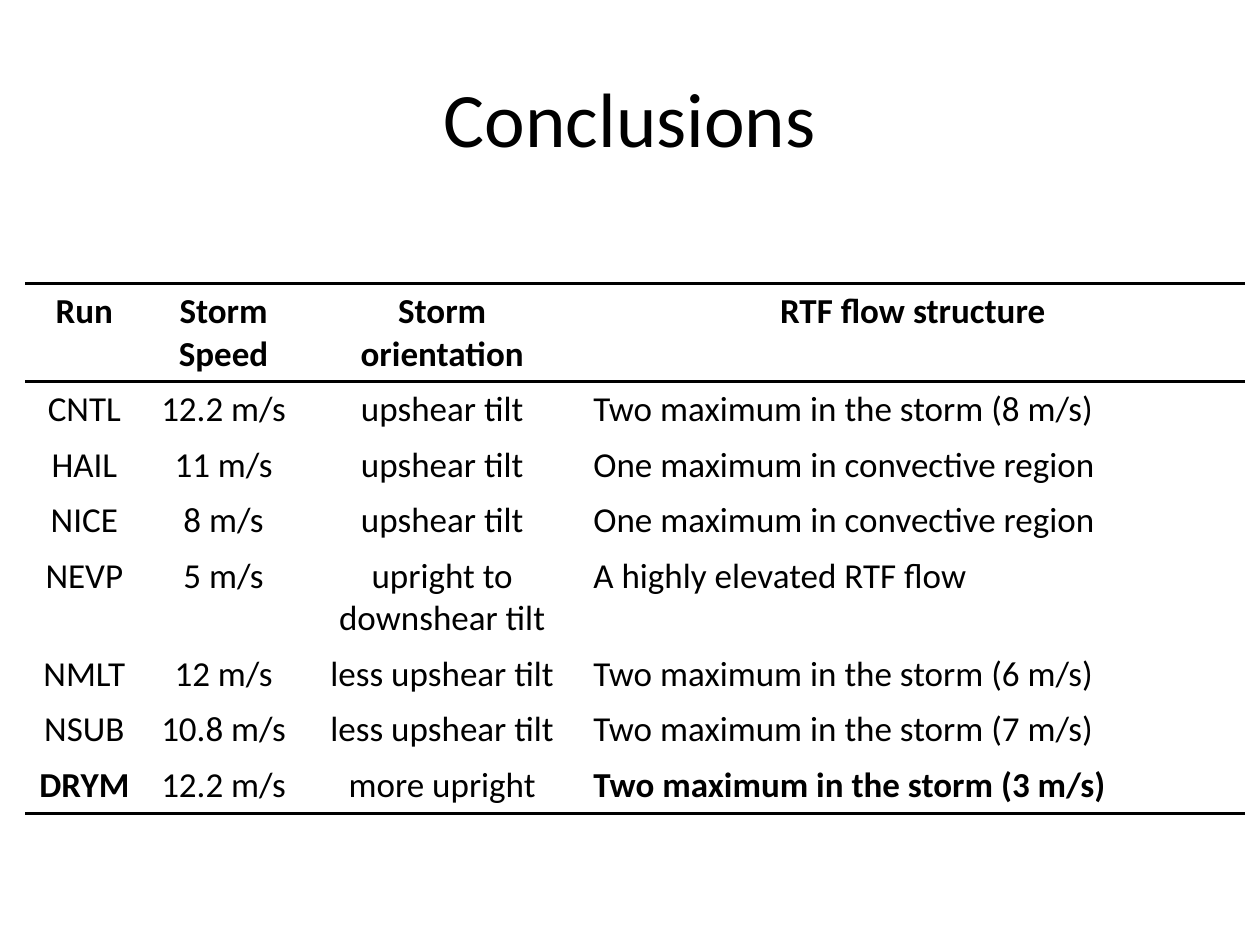
import dataclasses

import pptx
import pptx.dml.color
import pptx.enum.text
import pptx.oxml
import pptx.oxml.ns
import pptx.util

Inches = pptx.util.Inches
ALIGN = pptx.enum.text.PP_ALIGN
ANCHOR = pptx.enum.text.MSO_ANCHOR


@dataclasses.dataclass(frozen=True)
class Theme:
    font: str = "Calibri"
    ink: str = "000000"
    paper: str = "FFFFFF"
    title_size: int = 44
    table_size: int = 20
    rule_width: int = 2
    plain_table_style: str = "{2D5ABB26-0587-4C30-8999-92F81FD0307C}"


THEME = Theme()

HEADINGS = ("Run", "Storm Speed", "Storm orientation", "RTF flow structure")
RUNS = (
    ("CNTL", "12.2 m/s", "upshear tilt", "Two maximum in the storm (8 m/s)"),
    ("HAIL", "11 m/s", "upshear tilt", "One maximum in convective region"),
    ("NICE", "8 m/s", "upshear tilt", "One maximum in convective region"),
    ("NEVP", "5 m/s", "upright to downshear tilt", "A highly elevated RTF flow"),
    ("NMLT", "12 m/s", "less upshear tilt", "Two maximum in the storm (6 m/s)"),
    ("NSUB", "10.8 m/s", "less upshear tilt", "Two maximum in the storm (7 m/s)"),
    ("DRYM", "12.2 m/s", "more upright", "Two maximum in the storm (3 m/s)"),
)
COLUMN_SHARES = (0.94, 1.27, 2.2, 5.27)
ONE_LINE, TWO_LINES = 0.44, 0.78
TWO_LINE_RUNS = {"Run", "NEVP"}
BOLD_CELLS = {("DRYM", 0), ("DRYM", 3)}


def write(text_frame, text, size, align, bold=False):
    text_frame.text = text
    paragraph = text_frame.paragraphs[0]
    paragraph.alignment = align
    font = paragraph.runs[0].font
    font.name = THEME.font
    font.size = pptx.util.Pt(size)
    font.bold = bold
    font.color.rgb = pptx.dml.color.RGBColor.from_string(THEME.ink)


def rule_cell(cell, edges):
    properties = cell._tc.get_or_add_tcPr()
    for position, edge in enumerate(edges):
        line = pptx.oxml.parse_xml(
            f'<a:ln{edge} {pptx.oxml.ns.nsdecls("a")} w="{pptx.util.Pt(THEME.rule_width)}">'
            f'<a:solidFill><a:srgbClr val="{THEME.ink}"/></a:solidFill></a:ln{edge}>'
        )
        properties.insert(position, line)


def place_title(slide, left, top, width, height):
    title = slide.shapes.title
    title.left, title.top, title.width, title.height = left, top, width, height
    title.text_frame.vertical_anchor = ANCHOR.MIDDLE
    write(title.text_frame, "Conclusions", THEME.title_size, ALIGN.CENTER)


def place_run_table(slide, left, top, width, height):
    rows = (HEADINGS, *RUNS)
    frame = slide.shapes.add_table(len(rows), len(HEADINGS), left, top, width, height)
    table = frame.table
    table.first_row = table.horz_banding = False
    table._tbl.tblPr.find(pptx.oxml.ns.qn("a:tableStyleId")).text = THEME.plain_table_style

    for column, share in zip(table.columns, COLUMN_SHARES):
        column.width = int(width * share / sum(COLUMN_SHARES))
    row_shares = [TWO_LINES if row[0] in TWO_LINE_RUNS else ONE_LINE for row in rows]
    for row, share in zip(table.rows, row_shares):
        row.height = int(height * share / sum(row_shares))

    for r, row in enumerate(rows):
        is_heading = r == 0
        for c, text in enumerate(row):
            cell = table.cell(r, c)
            cell.fill.solid()
            cell.fill.fore_color.rgb = pptx.dml.color.RGBColor.from_string(THEME.paper)
            is_flow = c == len(HEADINGS) - 1 and not is_heading
            align = ALIGN.LEFT if is_flow else ALIGN.CENTER
            bold = is_heading or (row[0], c) in BOLD_CELLS
            write(cell.text_frame, text, THEME.table_size, align, bold)
            if is_heading:
                rule_cell(cell, "TB")
            elif r == len(rows) - 1:
                rule_cell(cell, "B")


def build_conclusions(presentation):
    slide = presentation.slides.add_slide(presentation.slide_layouts[5])
    place_title(slide, Inches(0.5), Inches(0.3), Inches(9), Inches(1.25))
    place_run_table(slide, Inches(0.2), Inches(2.25), Inches(9.68), Inches(4.2))


def main():
    presentation = pptx.Presentation()
    presentation.slide_width = Inches(10)
    presentation.slide_height = Inches(7.5)
    build_conclusions(presentation)
    presentation.save("out.pptx")


if __name__ == "__main__":
    main()
